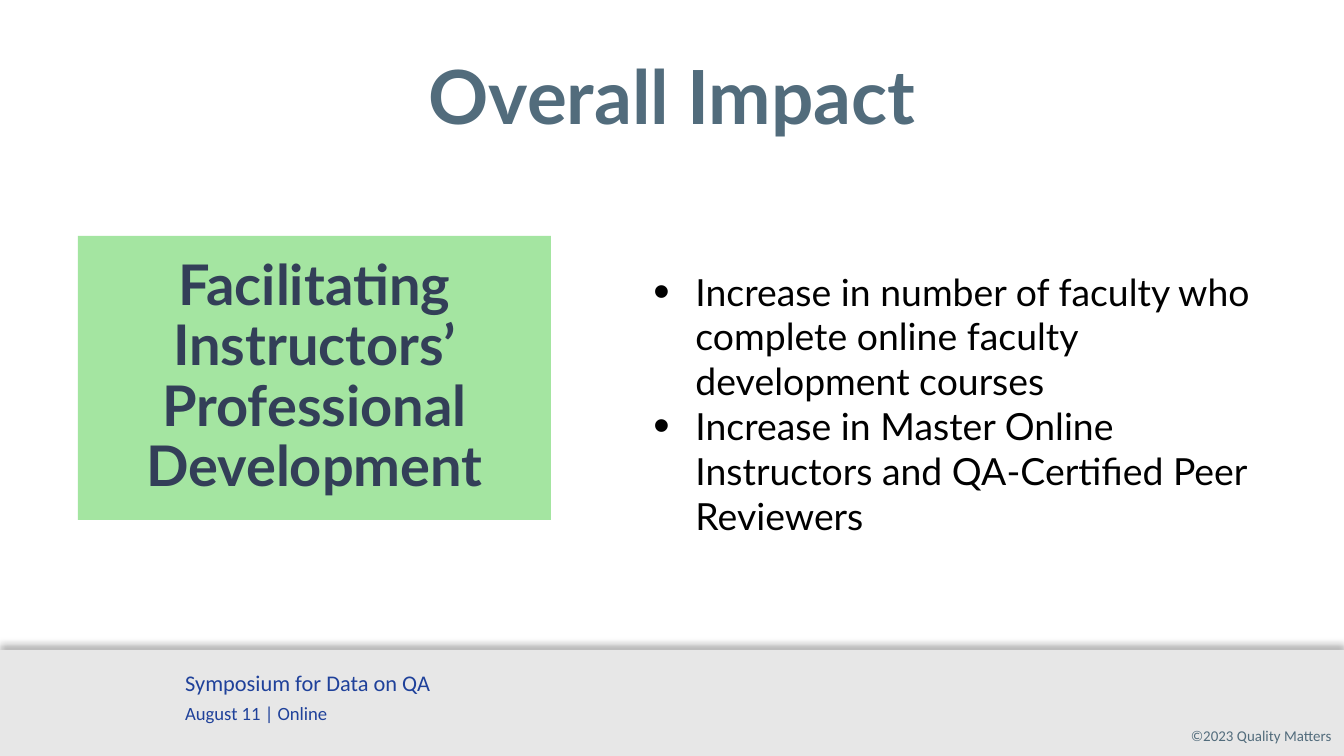
from lxml import etree
from pptx import Presentation
from pptx import util as u
from pptx.dml.color import RGBColor
from pptx.enum import shapes, text
from pptx.oxml import ns

EMU_PER_PX = 914400 / 134.4
SLATE = "526C7C"
BLUE = "1F419A"
BULLETS = (
    "Increase in number of faculty who complete online faculty development courses",
    "Increase in Master Online Instructors and QA-Certified Peer Reviewers",
)


def px(length):
    return u.Emu(round(length * EMU_PER_PX))


def rgb(color):
    return RGBColor.from_string(color)


def add_element(parent, tag, **attributes):
    return etree.SubElement(parent, ns.qn(tag), attributes)


def place(shape, left, top, width, height):
    shape.left, shape.top = px(left), px(top)
    shape.width, shape.height = px(width), px(height)


def format_frame(frame, anchor=text.MSO_ANCHOR.TOP, inset=None):
    frame.word_wrap = True
    frame.auto_size = text.MSO_AUTO_SIZE.NONE
    frame.vertical_anchor = anchor
    if inset is not None:
        frame.margin_left = frame.margin_right = px(inset)
        frame.margin_top = frame.margin_bottom = px(inset)


def write(paragraph, wording, size, color, font="Lato", bold=False,
          align=text.PP_ALIGN.LEFT, before=0):
    paragraph.text = wording
    paragraph.alignment = align
    paragraph.space_before = u.Pt(before)
    paragraph.font.name = font
    paragraph.font.size = u.Pt(size)
    paragraph.font.bold = bold
    paragraph.font.color.rgb = rgb(color)


def add_bullet(paragraph, indent):
    properties = paragraph._p.get_or_add_pPr()
    properties.set("marL", str(px(indent)))
    properties.set("indent", str(-px(indent)))
    add_element(add_element(properties, "a:buClr"), "a:srgbClr", val="000000")
    add_element(properties, "a:buSzPct", val="125000")
    add_element(properties, "a:buFont", typeface="Arial")
    add_element(properties, "a:buChar", char="•")


def add_panel(slide, box, color):
    panel = slide.shapes.add_shape(shapes.MSO_SHAPE.RECTANGLE, *map(px, box))
    panel.shadow.inherit = False
    panel.fill.solid()
    panel.fill.fore_color.rgb = rgb(color)
    panel.line.fill.background()
    return panel


def add_upward_shadow(shape):
    effects = shape._element.spPr.find(ns.qn("a:effectLst"))
    shadow = add_element(effects, "a:outerShdw", blurRad=str(u.Pt(4)),
                         dist=str(u.Pt(3)), dir="16200000", rotWithShape="0")
    color = add_element(shadow, "a:srgbClr", val="000000")
    add_element(color, "a:alpha", val="29000")


def add_text_box(slide, box):
    frame = slide.shapes.add_textbox(*map(px, box)).text_frame
    format_frame(frame)
    return frame


def add_footer(slide):
    add_upward_shadow(add_panel(slide, (0, 650, 1344, 106), "E7E7E7"))

    copyright_frame = add_text_box(slide, (1118, 720, 214, 32))
    copyright_frame.margin_right = 0
    write(copyright_frame.paragraphs[0], "©2023 Quality Matters", 8, SLATE,
          "Calibri", align=text.PP_ALIGN.RIGHT)

    event_frame = add_text_box(slide, (172, 663, 859, 69))
    write(event_frame.paragraphs[0], "Symposium for Data on QA", 12, BLUE, "Calibri")
    write(event_frame.add_paragraph(), "August 11 | Online", 10, BLUE, "Calibri",
          before=3)


def fill_title(title):
    place(title, 0, 48, 1344, 93)
    format_frame(title.text_frame, text.MSO_ANCHOR.MIDDLE)
    write(title.text_frame.paragraphs[0], "Overall Impact", 40, SLATE, bold=True,
          align=text.PP_ALIGN.CENTER)


def fill_impacts(body):
    place(body, 640, 262, 626, 231)
    frame = body.text_frame
    format_frame(frame)
    for index, wording in enumerate(BULLETS):
        paragraph = frame.add_paragraph() if index else frame.paragraphs[0]
        add_bullet(paragraph, 42)
        write(paragraph, wording, 20, "000000")


def add_theme_panel(slide):
    frame = add_panel(slide, (78, 236, 473, 284), "A4E5A1").text_frame
    format_frame(frame, text.MSO_ANCHOR.MIDDLE, inset=16)
    theme = frame.paragraphs[0]
    write(theme, "Facilitating Instructors’ Professional Development", 30, "333F58",
          bold=True, align=text.PP_ALIGN.CENTER)
    theme.line_spacing = 0.9


def main():
    presentation = Presentation()
    presentation.slide_width, presentation.slide_height = px(1344), px(756)
    slide = presentation.slides.add_slide(presentation.slide_layouts[1])
    add_footer(slide)
    fill_title(slide.shapes.title)
    fill_impacts(slide.placeholders[1])
    add_theme_panel(slide)
    presentation.save("out.pptx")


if __name__ == "__main__":
    main()
